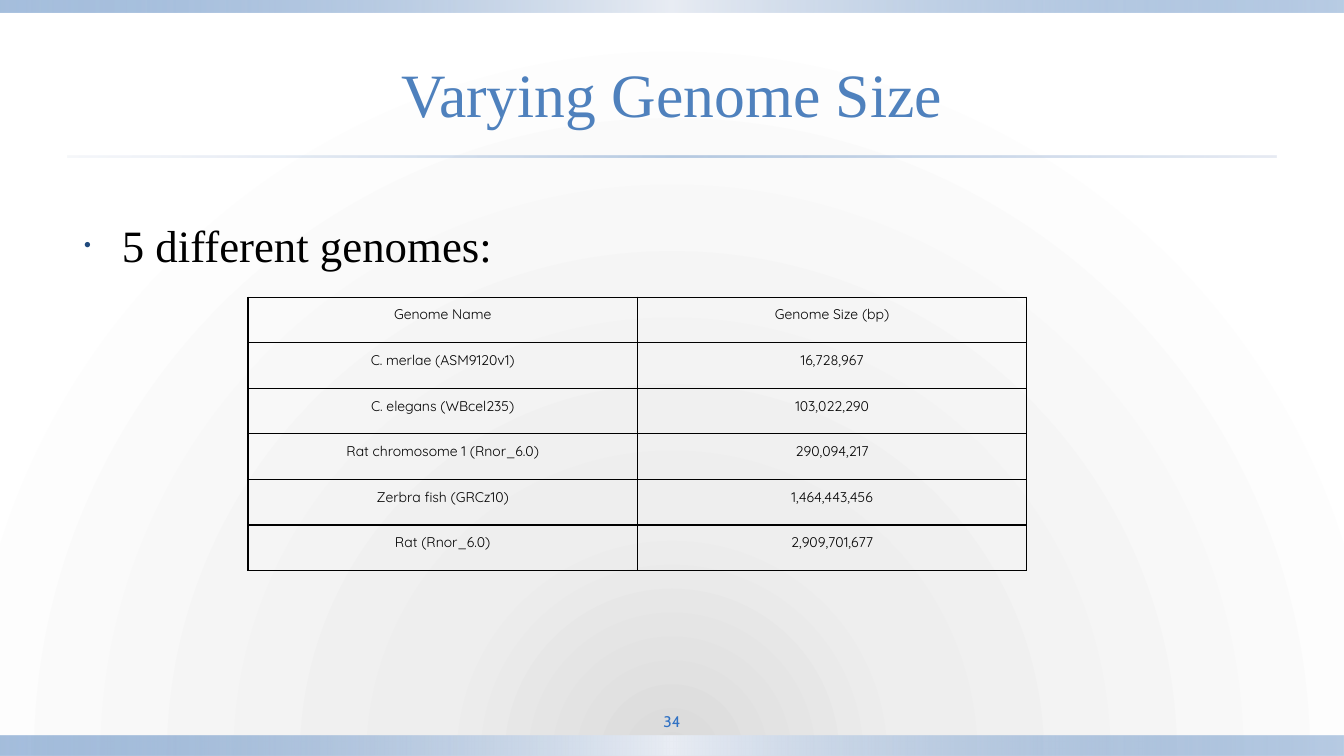
"""Build the slide that compares genome sizes."""
import dataclasses
import typing

import pptx
import pptx.dml.color
import pptx.enum.shapes
import pptx.enum.text
import pptx.oxml
import pptx.oxml.ns
import pptx.util

WIDE = pptx.util.Inches(13.33)
HIGH = pptx.util.Inches(7.5)
HUES = {
    "blue": "4F81BD", "pale": "E9EDF4", "mist": "D0D8E8",
    "navy": "1F497D", "page": "3172C4", "black": "000000",
    "grey": "DADADA", "light": "EEEEEE", "white": "FFFFFF",
}
ALIGN = pptx.enum.text.PP_ALIGN
MIDDLE = pptx.enum.text.MSO_ANCHOR.MIDDLE


@dataclasses.dataclass(frozen=True)
class Box:
    """A place in percent of the slide's width and height."""
    x: float
    y: float
    w: float
    h: float

    def spot(self) -> tuple[int, int, int, int]:
        return (round(WIDE * self.x / 100), round(HIGH * self.y / 100),
                round(WIDE * self.w / 100), round(HIGH * self.h / 100))


class Stop(typing.NamedTuple):
    at: int
    hue: str
    alpha: int = 100


class Style(typing.NamedTuple):
    font: str
    size: int
    hue: str


class Band(typing.NamedTuple):
    box: Box
    stops: list[Stop]


EDGE = [Stop(0, "blue", 50), Stop(50, "pale"), Stop(100, "blue", 40)]
RULE = [Stop(0, "mist", 20), Stop(50, "blue", 40), Stop(100, "mist", 50)]
BACK = [Stop(0, "grey"), Stop(31, "light"), Stop(100, "white")]
BANDS = [
    Band(Box(0, 97.33, 100, 2.67), EDGE),
    Band(Box(0, 0, 100, 1.6), EDGE),
    Band(Box(5, 20.53, 90, 0.27), RULE),
]
HEAD = Style("Times New Roman", 44, "blue")
BODY = Style("Times New Roman", 32, "black")
PAGE = Style("Cabin", 11, "page")
CELL = Style("Quicksand", 10, "black")
ROWS = [
    ("Genome Name", "Genome Size (bp)"),
    ("C. merlae (ASM9120v1)", "16,728,967"),
    ("C. elegans (WBcel235)", "103,022,290"),
    ("Rat chromosome 1 (Rnor_6.0)", "290,094,217"),
    ("Zerbra fish (GRCz10)", "1,464,443,456"),
    ("Rat (Rnor_6.0)", "2,909,701,677"),
]


def node(tag: str, inner: str = "", attrs: str = "") -> typing.Any:
    space = pptx.oxml.ns.nsdecls("a")
    return pptx.oxml.parse_xml(f"<a:{tag} {space} {attrs}>{inner}</a:{tag}>")


def blend(stops: list[Stop], shade: str) -> typing.Any:
    marks = "".join(
        f'<a:gs pos="{s.at * 1000}"><a:srgbClr val="{HUES[s.hue]}">'
        f'<a:alpha val="{s.alpha * 1000}"/></a:srgbClr></a:gs>'
        for s in stops)
    return node("gradFill", f"<a:gsLst>{marks}</a:gsLst>{shade}",
                'rotWithShape="1"')


def paint(slide: typing.Any) -> None:
    slide.background.fill.solid()
    props = slide.element.find(".//" + pptx.oxml.ns.qn("p:bgPr"))
    shade = ('<a:path path="circle"><a:fillToRect l="50000" t="150000" '
             'r="50000"/></a:path>')
    props.replace(props[0], blend(BACK, shade))


def draw(slide: typing.Any, band: Band) -> None:
    kind = pptx.enum.shapes.MSO_SHAPE.RECTANGLE
    shape = slide.shapes.add_shape(kind, *band.box.spot())
    shape.shadow.inherit = False
    shape.line.fill.background()
    shape.fill.solid()
    props = shape.element.spPr
    old = props.find(pptx.oxml.ns.qn("a:solidFill"))
    props.replace(old, blend(band.stops, '<a:lin ang="0" scaled="0"/>'))


def write(frame: typing.Any, text: str, style: Style,
          align: typing.Any = ALIGN.CENTER) -> typing.Any:
    frame.word_wrap = True
    para = frame.paragraphs[0]
    para.alignment = align
    run = para.add_run()
    run.text = text
    run.font.name = style.font
    run.font.size = pptx.util.Pt(style.size)
    run.font.bold = False
    run.font.color.rgb = pptx.dml.color.RGBColor.from_string(HUES[style.hue])
    return para


def hang(para: typing.Any, inch: float) -> typing.Any:
    props = para._p.get_or_add_pPr()
    props.set("marL", str(pptx.util.Inches(inch)))
    props.set("indent", str(-pptx.util.Inches(inch)))
    return props


def title(slide: typing.Any) -> None:
    shape = slide.shapes.title
    shape.left, shape.top, shape.width, shape.height = Box(
        5, 4, 90, 16.67).spot()
    shape.text_frame.vertical_anchor = MIDDLE
    write(shape.text_frame, "Varying Genome Size", HEAD)


def point(slide: typing.Any) -> None:
    shape = slide.shapes.add_textbox(*Box(5.48, 28.13, 81.7, 62).spot())
    para = write(shape.text_frame, "5 different genomes:", BODY, ALIGN.JUSTIFY)
    props = hang(para, 0.38)
    props.append(node("spcBef", '<a:spcPct val="20000"/>'))
    props.append(node("buClr", f'<a:srgbClr val="{HUES["navy"]}"/>'))
    props.append(node("buSzPct", attrs='val="50000"'))
    props.append(node("buFont", attrs='typeface="Times New Roman"'))
    props.append(node("buChar", attrs='char="•"'))


def number(slide: typing.Any) -> None:
    frame = slide.shapes.add_textbox(
        *Box(45, 93.33, 10, 4.13).spot()).text_frame
    frame.margin_left = frame.margin_right = pptx.util.Inches(0.05)
    frame.vertical_anchor = MIDDLE
    write(frame, "34", PAGE)


def fill(cell: typing.Any, text: str) -> None:
    cell.margin_left = cell.margin_right = pptx.util.Inches(0.07)
    cell.margin_top = cell.margin_bottom = 0
    para = write(cell.text_frame, text, CELL)
    hang(para, 0.18)
    para.line_spacing = 1.5
    para.space_before = pptx.util.Pt(12)
    para.space_after = pptx.util.Pt(6)
    cell.fill.background()
    props = cell._tc.get_or_add_tcPr()
    ink = f'<a:solidFill><a:srgbClr val="{HUES["black"]}"/></a:solidFill>'
    for spot, side in enumerate("LRTB"):
        props.insert(spot, node("ln" + side, ink,
                                f'w="{pptx.util.Pt(1)}"'))


def table(slide: typing.Any) -> None:
    box = Box(18.45, 39.33, 57.95, 36.13)
    grid = slide.shapes.add_table(len(ROWS), 2, *box.spot()).table
    grid.first_row = grid.horz_banding = False
    for r, row in enumerate(ROWS):
        for c, text in enumerate(row):
            fill(grid.cell(r, c), text)


def main() -> None:
    deck = pptx.Presentation()
    deck.slide_width, deck.slide_height = WIDE, HIGH
    slide = deck.slides.add_slide(deck.slide_layouts[5])
    paint(slide)
    for band in BANDS:
        draw(slide, band)
    title(slide)
    point(slide)
    number(slide)
    table(slide)
    deck.save("out.pptx")


if __name__ == "__main__":
    main()
